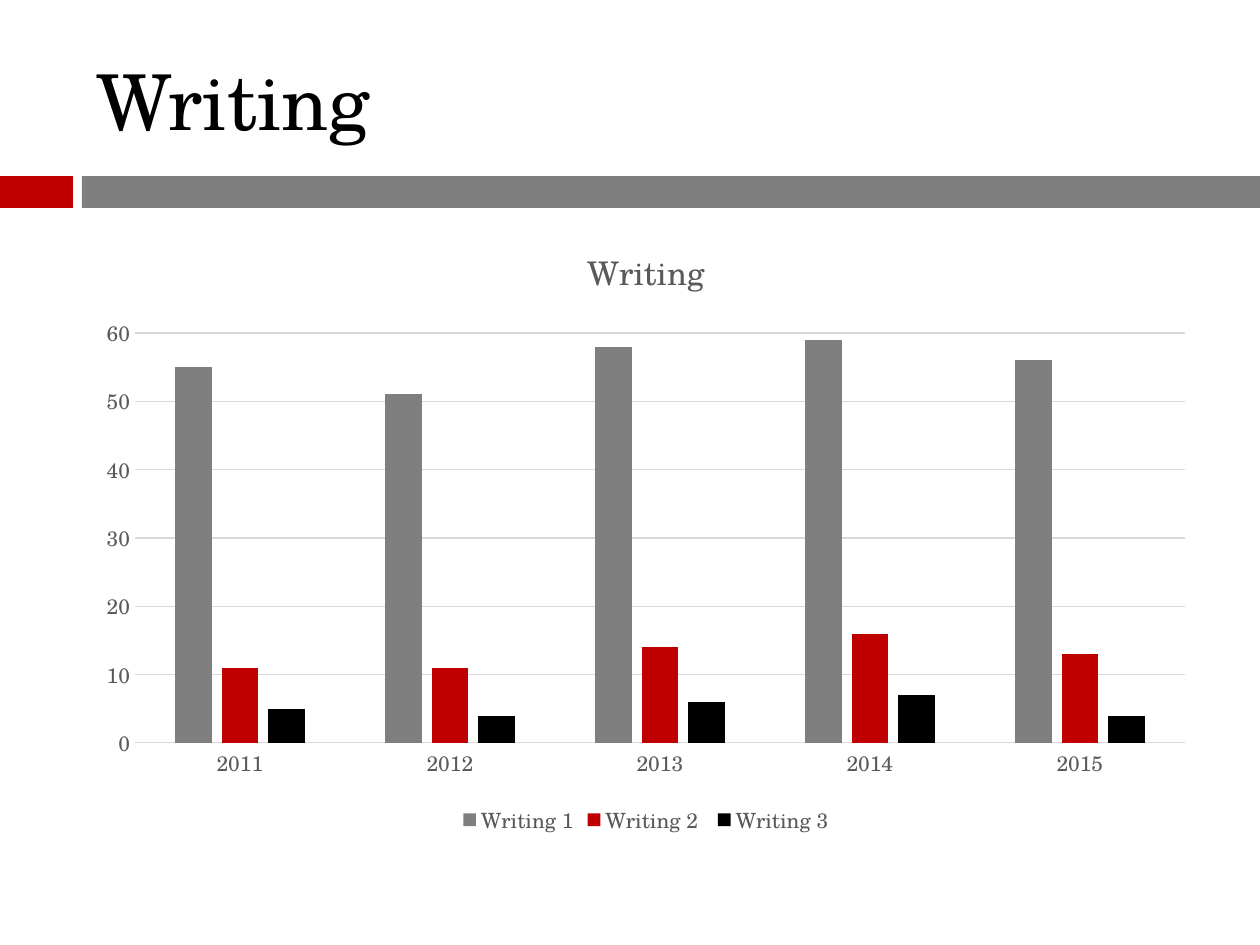
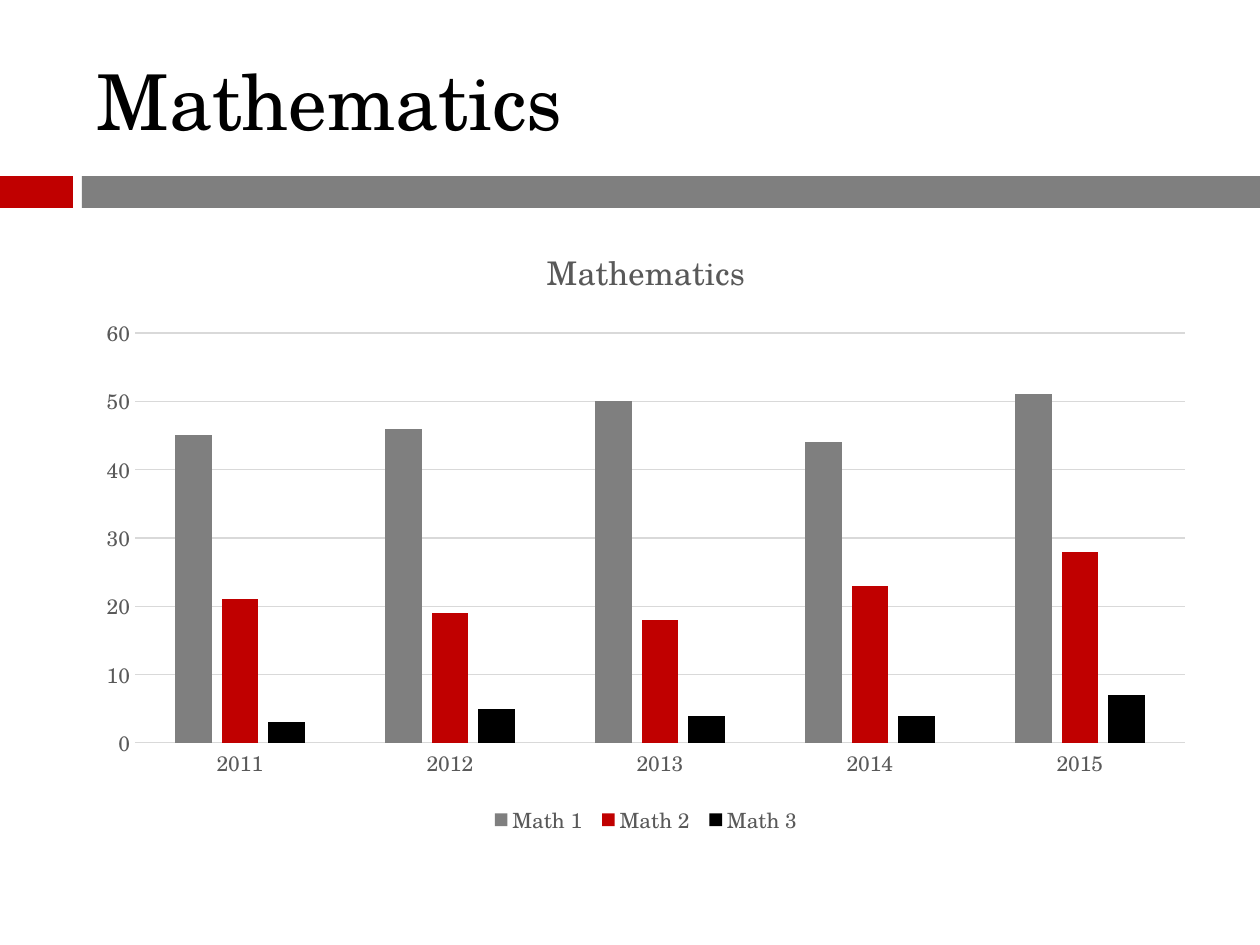
from dataclasses import dataclass

from lxml.etree import SubElement
from pptx import Presentation
from pptx.chart.data import CategoryChartData
from pptx.dml.color import RGBColor
from pptx.enum.chart import XL_CHART_TYPE, XL_LEGEND_POSITION, XL_TICK_MARK
from pptx.enum.shapes import MSO_SHAPE
from pptx.enum.text import MSO_ANCHOR, MSO_AUTO_SIZE, PP_ALIGN
from pptx.oxml.ns import qn
from pptx.util import Emu, Pt

PX = 914400 / 126  # EMU per px
PAGE_WIDTH, PAGE_HEIGHT = 1260, 945
TITLE_ONLY = 5


@dataclass(frozen=True)
class Theme:
    font: str = "TeX Gyre Schola"
    ink: str = "000000"
    gray: str = "7F7F7F"
    red: str = "C00000"
    label: str = "595959"
    grid: str = "D9D9D9"
    paper: str = "FFFFFF"
    title_size: float = 44
    chart_title_size: float = 18.6
    label_size: float = 12
    hairline: float = 0.75


@dataclass(frozen=True)
class Box:
    left: int
    top: int
    width: int
    height: int

    def emu(self):
        return [Emu(round(n * PX)) for n in
                (self.left, self.top, self.width, self.height)]


THEME = Theme()
SERIES_COLORS = (THEME.gray, THEME.red, THEME.ink)
TITLE_BOX = Box(84, 32, 1124, 136)
BAND_BOX = Box(0, 176, PAGE_WIDTH, 32)
CHART_BOX = Box(84, 220, 1124, 620)
PLOT_BOX = Box(51, 113, 1050, 410)  # relative to the chart

YEARS = ("2011", "2012", "2013", "2014", "2015")
SUBJECTS = (
    ("Writing", (
        ("Writing 1", (55, 51, 58, 59, 56)),
        ("Writing 2 ", (11, 11, 14, 16, 13)),
        ("Writing 3", (5, 4, 6, 7, 4)),
    )),
    ("Mathematics", (
        ("Math 1 ", (45, 46, 50, 44, 51)),
        ("Math 2 ", (21, 19, 18, 23, 28)),
        ("Math 3", (3, 5, 4, 4, 7)),
    )),
)


def rgb(color):
    return RGBColor.from_string(color)


def style_font(font, size=THEME.label_size, color=THEME.label):
    font.name = THEME.font
    font.size = Pt(size)
    font.bold = False
    font.color.rgb = rgb(color)


def write_text(frame, text, align=PP_ALIGN.LEFT, **font_format):
    para = frame.paragraphs[0]
    para.alignment = align
    span = para.add_run()
    span.text = text
    style_font(span.font, **font_format)


def style_line(line):
    line.color.rgb = rgb(THEME.grid)
    line.width = Pt(THEME.hairline)


def add_title(page, box, text):
    title = page.shapes.title
    title.left, title.top, title.width, title.height = box.emu()
    frame = title.text_frame
    frame.word_wrap = True
    frame.auto_size = MSO_AUTO_SIZE.NONE
    frame.vertical_anchor = MSO_ANCHOR.MIDDLE
    write_text(frame, text, size=THEME.title_size, color=THEME.ink)


def add_band(page, box, red_width=73, gap=9):
    """Red tab at the left, gray bar over the rest of the width."""
    gray_left = red_width + gap
    for left, width, color in ((0, red_width, THEME.red),
                               (gray_left, box.width - gray_left, THEME.gray)):
        part = Box(box.left + left, box.top, width, box.height)
        band = page.shapes.add_shape(MSO_SHAPE.RECTANGLE, *part.emu())
        band.shadow.inherit = False
        band.fill.solid()
        band.fill.fore_color.rgb = rgb(color)
        band.line.fill.background()


def place_plot(chart, box, plot):
    """Fix the inner plot area as fractions of the chart's box."""
    area = chart._chartSpace.chart.plotArea
    layout = area.find(qn("c:layout"))
    if layout is None:
        layout = SubElement(area, qn("c:layout"))
        area.insert(0, layout)
    manual = SubElement(layout, qn("c:manualLayout"))
    for tag, value in (("layoutTarget", "inner"),
                       ("xMode", "edge"), ("yMode", "edge"),
                       ("x", plot.left / box.width),
                       ("y", plot.top / box.height),
                       ("w", plot.width / box.width),
                       ("h", plot.height / box.height)):
        SubElement(manual, qn(f"c:{tag}")).set("val", str(value))


def style_axes(chart):
    for axis in (chart.category_axis, chart.value_axis):
        axis.major_tick_mark = XL_TICK_MARK.NONE
        axis.minor_tick_mark = XL_TICK_MARK.NONE
        style_font(axis.tick_labels.font)
    style_line(chart.category_axis.format.line)
    values = chart.value_axis
    values.minimum_scale, values.maximum_scale, values.major_unit = 0, 60, 10
    values.format.line.fill.background()
    values.has_major_gridlines = True
    style_line(values.major_gridlines.format.line)


def add_column_chart(page, box, title, rows):
    data = CategoryChartData()
    data.categories = YEARS
    for name, scores in rows:
        data.add_series(name, scores)
    chart = page.shapes.add_chart(
        XL_CHART_TYPE.COLUMN_CLUSTERED, *box.emu(), data).chart
    style_font(chart.font, size=10, color=THEME.ink)

    # Title and legend
    chart.has_title = True
    write_text(chart.chart_title.text_frame, title, align=PP_ALIGN.CENTER,
               size=THEME.chart_title_size)
    chart.chart_title.include_in_layout = False
    chart.has_legend = True
    chart.legend.position = XL_LEGEND_POSITION.BOTTOM
    chart.legend.include_in_layout = False
    style_font(chart.legend.font)

    # Columns
    plot = chart.plots[0]
    plot.vary_by_categories = False
    plot.gap_width, plot.overlap = 219, -27
    for series, color in zip(plot.series, SERIES_COLORS):
        series.format.fill.solid()
        series.format.fill.fore_color.rgb = rgb(color)
        series.invert_if_negative = False
    style_axes(chart)
    place_plot(chart, box, PLOT_BOX)


def add_subject_page(deck, subject, rows):
    page = deck.slides.add_slide(deck.slide_layouts[TITLE_ONLY])
    add_band(page, BAND_BOX)
    add_title(page, TITLE_BOX, subject)
    add_column_chart(page, CHART_BOX, subject, rows)


def main():
    deck = Presentation()
    deck.slide_width = Emu(round(PAGE_WIDTH * PX))
    deck.slide_height = Emu(round(PAGE_HEIGHT * PX))
    background = deck.slide_master.background.fill
    background.solid()
    background.fore_color.rgb = rgb(THEME.paper)
    for subject, rows in SUBJECTS:
        add_subject_page(deck, subject, rows)
    deck.save("out.pptx")


if __name__ == "__main__":
    main()
